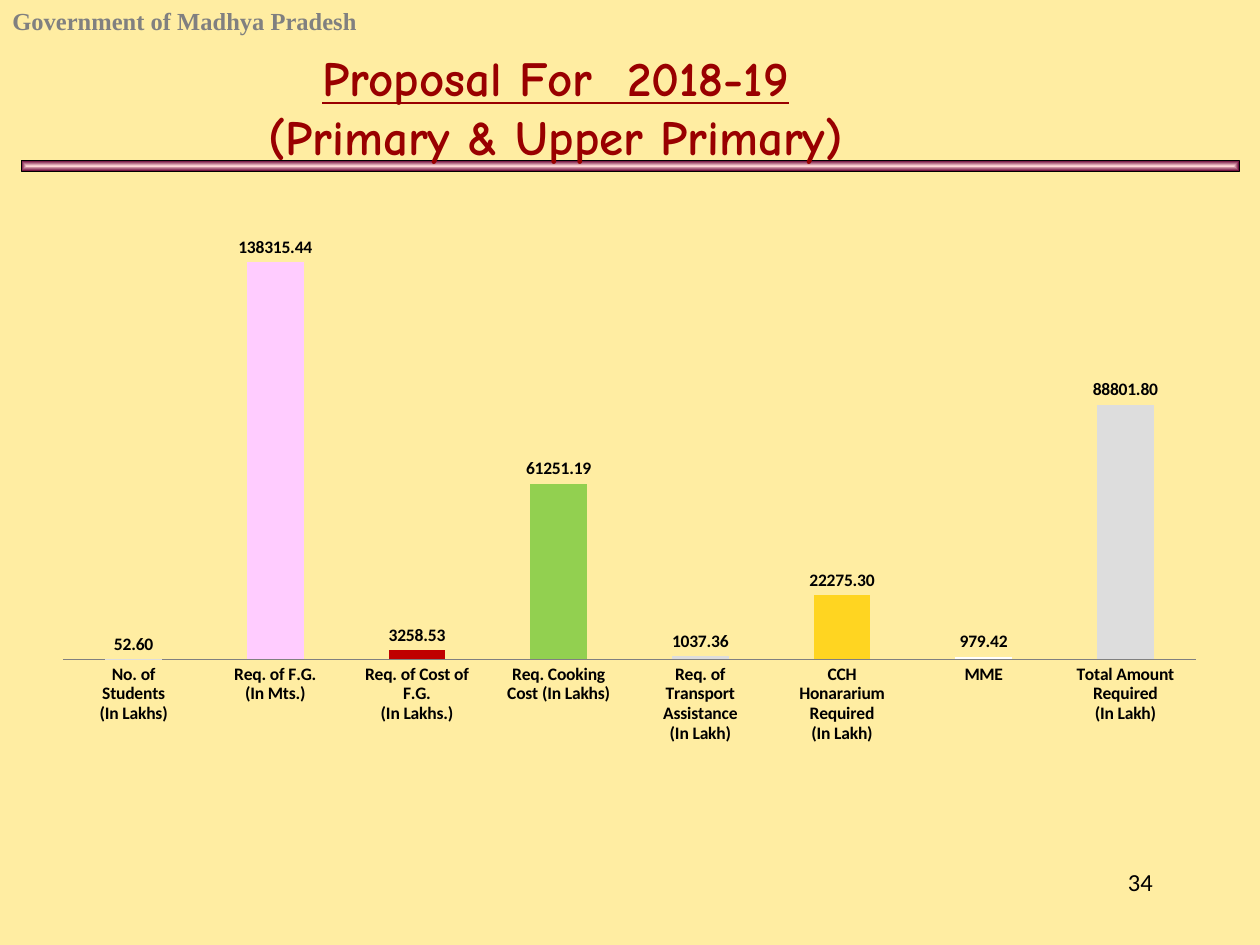
from lxml import etree
from pptx import Presentation, util as u
from pptx.chart.data import CategoryChartData
from pptx.dml.color import RGBColor
from pptx.enum import chart as ch, shapes, text
from pptx.oxml import parse_xml
from pptx.oxml.ns import nsdecls, qn

Cm, Pt = u.Cm, u.Pt
ALIGN = text.PP_ALIGN


def rgb(value):
    return RGBColor.from_string(value)


class Deck:
    """Holds the style and the current slide."""
    body_font, title_font, header_font = "Calibri", "Comic Neue", "Times New Roman"
    ink, title_color, header_color = "000000", "990000", "808080"

    def __init__(self, width, height, background):
        self.prs = Presentation()
        self.prs.slide_width, self.prs.slide_height = Cm(width), Cm(height)
        self.slide = self.prs.slides.add_slide(self.prs.slide_layouts[6])
        fill = self.slide.background.fill
        fill.solid()
        fill.fore_color.rgb = rgb(background)

    def text(self, box, lines, size, font, color, bold=False, align=ALIGN.LEFT):
        """Each line is a (words, underlined) pair."""
        frame = self.slide.shapes.add_textbox(*map(Cm, box)).text_frame
        frame.word_wrap = True
        for i, (words, underlined) in enumerate(lines):
            paragraph = frame.add_paragraph() if i else frame.paragraphs[0]
            paragraph.alignment = align
            run = paragraph.add_run()
            run.text = words
            run.font.size, run.font.name = Pt(size), font
            run.font.bold, run.font.underline = bold, underlined
            run.font.color.rgb = rgb(color)

    def gradient_bar(self, box, inner, outer):
        bar = self.slide.shapes.add_shape(shapes.MSO_SHAPE.RECTANGLE, *map(Cm, box))
        bar.shadow.inherit = False
        bar.line.color.rgb = rgb(self.ink)
        bar.line.width = Pt(0.5)
        bar.fill.gradient()
        for stop, color in zip(bar.fill.gradient_stops, (inner, outer)):
            stop.color.rgb = rgb(color)
        # Shade from the centre out to the edges
        gradient = bar._element.spPr.find(qn("a:gradFill"))
        gradient.replace(gradient.find(qn("a:lin")), parse_xml(
            f'<a:path {nsdecls("a")} path="shape">'
            '<a:fillToRect l="50000" t="50000" r="50000" b="50000"/></a:path>'))

    def column_chart(self, box, name, bars, default_color, top, plot):
        """Each bar is a (category, value, color or None) triple."""
        data = CategoryChartData(number_format="0.00")
        data.categories = [category for category, _, _ in bars]
        data.add_series(name, [value for _, value, _ in bars])
        chart = self.slide.shapes.add_chart(
            ch.XL_CHART_TYPE.COLUMN_CLUSTERED, *map(Cm, box), data).chart
        chart.has_legend = chart.has_title = False
        chart.font.size, chart.font.name = Pt(10), self.body_font
        chart.font.color.rgb = rgb(self.ink)

        # Axes
        amounts, items = chart.value_axis, chart.category_axis
        amounts.minimum_scale, amounts.maximum_scale = 0, top
        amounts.has_major_gridlines = amounts.visible = False
        items.major_tick_mark = ch.XL_TICK_MARK.NONE
        items.tick_labels.font.bold = True
        items.format.line.color.rgb = rgb("808080")

        # Columns and their colours
        columns = chart.plots[0]
        columns.vary_by_categories = False
        columns.gap_width = 150
        series = columns.series[0]
        series.format.fill.solid()
        series.format.fill.fore_color.rgb = rgb(default_color)
        for i, (_, _, color) in enumerate(bars):
            if color:
                fill = series.points[i].format.fill
                fill.solid()
                fill.fore_color.rgb = rgb(color)

        # Value labels
        labels = series.data_labels
        labels.show_value = True
        labels.number_format, labels.number_format_is_linked = "0.00", False
        labels.position = ch.XL_LABEL_POSITION.OUTSIDE_END
        labels.font.bold = True

        # Fixed plot area, as fractions of the chart
        area = chart._chartSpace.chart.plotArea
        for old in area.findall(qn("c:layout")):
            area.remove(old)
        layout = etree.Element(qn("c:layout"))
        manual = etree.SubElement(layout, qn("c:manualLayout"))
        settings = dict(layoutTarget="inner", xMode="edge", yMode="edge",
                        **dict(zip("xywh", plot)))
        for tag, value in settings.items():
            etree.SubElement(manual, qn(f"c:{tag}")).set("val", str(value))
        area.insert(0, layout)


def main():
    deck = Deck(25.4, 19.05, "FFEDA2")

    # Header and rule
    deck.text((0, 0, 16.93, 0.86), [("Government of Madhya Pradesh", False)],
              14, deck.header_font, deck.header_color, bold=True)
    deck.gradient_bar((0.43, 3.24, 24.55, 0.21), "FFD5D5", "660033")

    # Title
    deck.text((-1.27, 0.84, 24.94, 2.64),
              [("Proposal For  2018-19", True), ("(Primary & Upper Primary)", False)],
              28, deck.title_font, deck.title_color, bold=True, align=ALIGN.CENTER)

    # Requirements chart
    requirements = [
        ("No. of\nStudents\n(In Lakhs)", 52.6, None),
        ("Req. of F.G.\n(In Mts.)", 138315.44, "FFCCFF"),
        ("Req. of Cost of F.G.\n(In Lakhs.)", 3258.53, "C00000"),
        ("Req. Cooking\nCost (In Lakhs)", 61251.19, "92D050"),
        ("Req. of\nTransport\nAssistance\n(In Lakh)", 1037.36, None),
        ("CCH\nHonararium\nRequired\n(In Lakh)", 22275.3, "FFD521"),
        ("MME", 979.42, "FFFFFF"),
        ("Total Amount\nRequired\n(In Lakh)", 88801.8, None),
    ]
    deck.column_chart((0.79, 3.81, 23.8, 11.43), "Series 1", requirements,
                      "DDDDDD", 160000, (0.02, 0.02, 0.96, 0.81))

    # Page number
    deck.text((18.21, 17.35, 5.28, 1.27), [("34", False)],
              14, deck.body_font, deck.ink, align=ALIGN.RIGHT)

    deck.prs.save("out.pptx")


if __name__ == "__main__":
    main()
